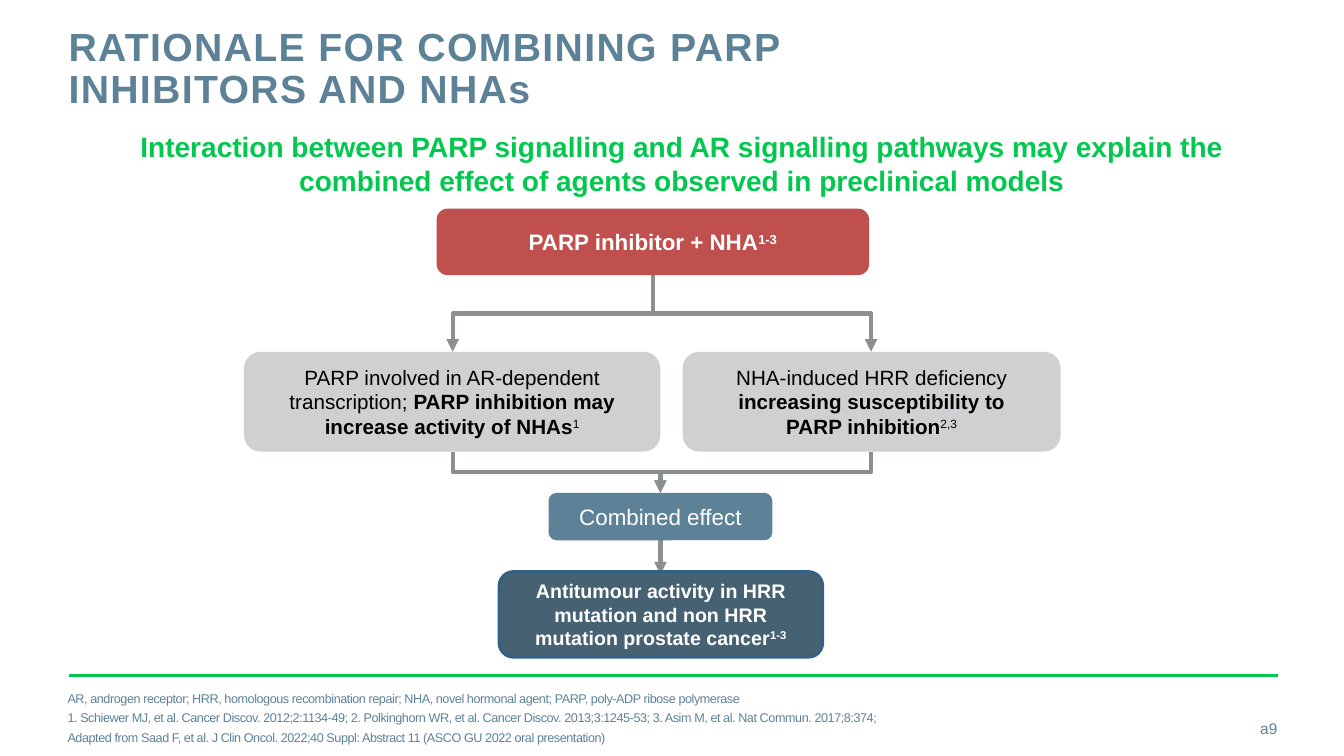
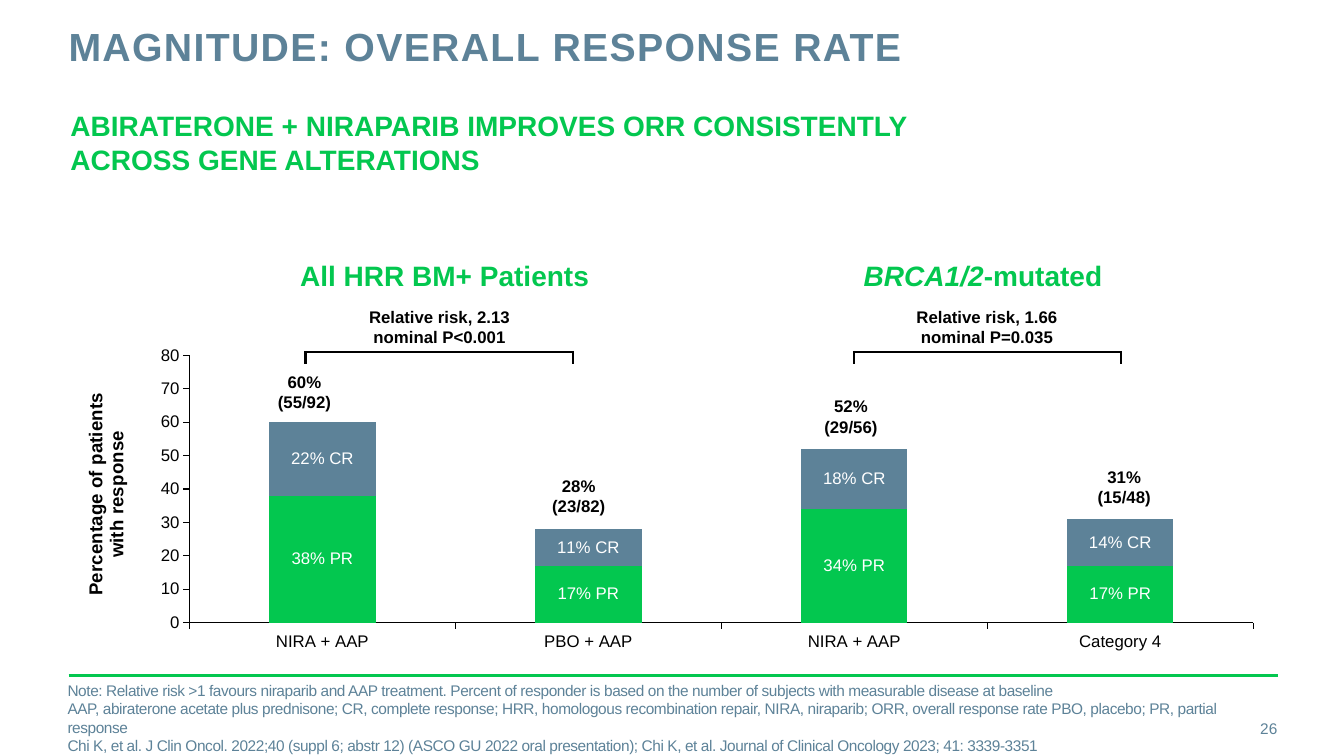
from lxml import etree
from pptx import Presentation
from pptx.chart.data import CategoryChartData
from pptx.dml.color import RGBColor
from pptx.enum.chart import XL_CHART_TYPE, XL_LABEL_POSITION, XL_TICK_MARK
from pptx.enum.shapes import MSO_CONNECTOR, MSO_SHAPE
from pptx.enum.text import MSO_ANCHOR, PP_ALIGN
from pptx.oxml import parse_xml
from pptx.oxml.ns import nsdecls, qn
from pptx.util import Inches, Pt

GREEN = RGBColor(0x03, 0xC7, 0x4F)
STEEL = RGBColor(0x5D, 0x82, 0x98)
DARK_STEEL = RGBColor(0x46, 0x61, 0x72)
OUTLINE_BLUE = RGBColor(0x33, 0x60, 0x84)
RED = RGBColor(0xC0, 0x50, 0x4D)
LIGHT_GREY = RGBColor(0xD1, 0xCF, 0xD1)
ARROW_GREY = RGBColor(0x8C, 0x8F, 0x8F)
BLACK = RGBColor(0, 0, 0)
WHITE = RGBColor(255, 255, 255)
FONT = "Arial"
LEFT, CENTER, RIGHT = PP_ALIGN.LEFT, PP_ALIGN.CENTER, PP_ALIGN.RIGHT
TOP, MIDDLE = MSO_ANCHOR.TOP, MSO_ANCHOR.MIDDLE


def write(shape, paragraphs, size, color, bold=None, align=LEFT, anchor=TOP,
          margins=(0, 0), gap=0, line=None, tracking=0):
    frame = shape.text_frame
    frame.word_wrap = True
    frame.vertical_anchor = anchor
    frame.margin_left = frame.margin_right = Inches(margins[0])
    frame.margin_top = frame.margin_bottom = Inches(margins[1])
    for index, runs in enumerate(paragraphs):
        paragraph = frame.add_paragraph() if index else frame.paragraphs[0]
        paragraph.alignment = align
        paragraph.space_before = Pt(gap if index else 0)
        if line:
            paragraph.line_spacing = Pt(line)
        font = paragraph.font
        font.name, font.size, font.bold = FONT, Pt(size), bold
        font.color.rgb = color
        for text, style in [(runs, "")] if isinstance(runs, str) else runs:
            run = paragraph.add_run()
            run.text = text
            properties = run._r.get_or_add_rPr()
            if "b" in style:
                run.font.bold = True
            if "i" in style:
                run.font.italic = True
            if "^" in style:
                properties.set("baseline", "30000")
            if tracking:
                properties.set("spc", str(round(tracking * 100)))


def connect(slide, kind, start, end, color, width, arrow=False):
    connector = slide.shapes.add_connector(kind, *map(Inches, start + end))
    connector.line.color.rgb = color
    connector.line.width = Pt(width)
    properties = connector._element.spPr
    if arrow:
        etree.SubElement(properties.find(qn("a:ln")), qn("a:tailEnd"), type="triangle")
    etree.SubElement(properties, qn("a:effectLst"))
    return connector


prs = Presentation()
prs.slide_width, prs.slide_height = Inches(13.33), Inches(7.5)

pages = [
    ("RATIONALE FOR COMBINING PARP INHIBITORS AND NHAs", "a9", 9, 3, [
        "AR, androgen receptor; HRR, homologous recombination repair; NHA, novel hormonal agent; "
        "PARP, poly-ADP ribose polymerase",
        "1. Schiewer MJ, et al. Cancer Discov. 2012;2:1134-49; 2. Polkinghorn WR, et al. Cancer Discov. "
        "2013;3:1245-53; 3. Asim M, et al. Nat Commun. 2017;8:374;",
        "Adapted from Saad F, et al. J Clin Oncol. 2022;40 Suppl: Abstract 11 (ASCO GU 2022 oral presentation)",
    ]),
    ("MAGNITUDE: OVERALL RESPONSE RATE", "26", 11, 0, [
        "Note: Relative risk >1 favours niraparib and AAP treatment. Percent of responder is based on "
        "the number of subjects with measurable disease at baseline",
        "AAP, abiraterone acetate plus prednisone; CR, complete response; HRR, homologous recombination "
        "repair, NIRA, niraparib; ORR, overall response rate PBO, placebo; PR, partial response",
        "Chi K, et al. J Clin Oncol. 2022;40 (suppl 6; abstr 12) (ASCO GU 2022 oral presentation); "
        "Chi K, et al. Journal of Clinical Oncology 2023; 41: 3339-3351",
    ]),
]
slides = []
for title, number, note_size, note_gap, notes in pages:
    slide = prs.slides.add_slide(prs.slide_layouts[6])
    slides.append(slide)
    connect(slide, MSO_CONNECTOR.STRAIGHT, (0.68, 6.7), (12.68, 6.7), GREEN, 2)
    box = slide.shapes.add_textbox
    write(box(Inches(0.68), Inches(0.27), Inches(9.5), Inches(0.88)), [title],
          28, STEEL, bold=True, line=30, tracking=1)
    write(box(Inches(0.67), Inches(6.92), Inches(11.84), Inches(0.4)), notes,
          note_size, STEEL, anchor=MIDDLE, gap=note_gap, tracking=-0.3)
    write(box(Inches(11.81), Inches(7.03), Inches(0.86), Inches(0.4)), [number],
          11, STEEL, align=RIGHT, anchor=MIDDLE)
rationale, response = slides

write(rationale.shapes.add_textbox(Inches(1.25), Inches(1.24), Inches(11.03), Inches(0.77)),
      ["Interaction between PARP signalling and AR signalling pathways may explain the "
       "combined effect of agents observed in preclinical models"],
      20, GREEN, bold=True, align=CENTER, margins=(0.1, 0.05))

branches = [
    ((6.48, 2.73), (4.49, 3.49)),
    ((6.48, 2.73), (8.64, 3.49)),
    ((4.49, 4.48), (6.55, 4.89)),
    ((8.64, 4.48), (6.55, 4.89)),
]
for (x1, y1), (x2, y2) in branches:
    turn = 1 if x2 < x1 else -1
    mid_x, mid_y = (x1 + x2) / 2, (y1 + y2) / 2
    half_drop, half_span = turn * (y2 - y1) / 2, abs(x2 - x1) / 2
    branch = connect(rationale, MSO_CONNECTOR.ELBOW, (mid_x - half_drop, mid_y - half_span),
                     (mid_x + half_drop, mid_y + half_span), ARROW_GREY, 3, arrow=True)
    branch._element.spPr.find(qn("a:xfrm")).set("rot", str(turn * 90 % 360 * 60000))
connect(rationale, MSO_CONNECTOR.STRAIGHT, (6.55, 5.36), (6.55, 5.7), ARROW_GREY, 3, arrow=True)

steps = [
    ((4.33, 2.07, 4.29, 0.66), RED, WHITE, 16, True, 0.1,
     [("PARP inhibitor + NHA", ""), ("1-3", "^")]),
    ((2.42, 3.49, 4.13, 0.99), LIGHT_GREY, BLACK, 14.7, None, 0.2,
     [("PARP involved in AR-dependent transcription; ", ""),
      ("PARP inhibition may increase activity of NHAs", "b"), ("1", "^")]),
    ((6.77, 3.49, 3.75, 0.99), LIGHT_GREY, BLACK, 14.7, None, 0.35,
     [("NHA-induced HRR deficiency ", ""),
      ("increasing susceptibility to PARP inhibition", "b"), ("2,3", "^")]),
    ((5.44, 4.89, 2.22, 0.47), STEEL, WHITE, 16, None, 0.1, "Combined effect"),
    ((4.95, 5.67, 3.21, 0.85), DARK_STEEL, WHITE, 14, True, 0.2,
     [("Antitumour activity in HRR mutation and non HRR mutation prostate cancer", ""),
      ("1-3", "^")]),
]
for place, fill, color, size, bold, side_margin, runs in steps:
    step = rationale.shapes.add_shape(MSO_SHAPE.ROUNDED_RECTANGLE, *map(Inches, place))
    step.shadow.inherit = False
    step.fill.solid()
    step.fill.fore_color.rgb = fill
    step.line.fill.background()
    write(step, [runs], size, color, bold=bold, align=CENTER, anchor=MIDDLE,
          margins=(side_margin, 0.05))
step.line.color.rgb = OUTLINE_BLUE
step.line.width = Pt(2)

write(response.shapes.add_textbox(Inches(0.6), Inches(1.03), Inches(9.3), Inches(0.77)),
      ["ABIRATERONE + NIRAPARIB IMPROVES ORR CONSISTENTLY ACROSS GENE ALTERATIONS"],
      20, GREEN, bold=True, margins=(0.1, 0.05))

rates = CategoryChartData()
rates.categories = ["NIRA + AAP", "PBO + AAP", "NIRA + AAP", "Category 4"]
rates.add_series("PR", (38, 17, 34, 17))
rates.add_series("CR", (22, 11, 18, 14))
chart = response.shapes.add_chart(XL_CHART_TYPE.COLUMN_STACKED, Inches(0.68), Inches(3.37),
                                  Inches(11.99), Inches(3.12), rates).chart
chart.has_legend = False
chart.has_title = False
chart.font.name, chart.font.size = FONT, Pt(12)
chart.font.color.rgb = BLACK
plot = chart.plots[0]
plot.gap_width, plot.overlap, plot.vary_by_categories = 150, 100, False
for series, color in zip(plot.series, (GREEN, STEEL)):
    series.format.fill.solid()
    series.format.fill.fore_color.rgb = color
    labels = series.data_labels
    labels.show_value = True
    labels.number_format = f'0"% {series.name}"'
    labels.number_format_is_linked = False
    labels.position = XL_LABEL_POSITION.CENTER
    labels.font.name, labels.font.size = FONT, Pt(12)
    labels.font.color.rgb = WHITE

percent_axis = chart.value_axis
for axis in (chart.category_axis, percent_axis):
    axis.has_major_gridlines = False
    axis.major_tick_mark = XL_TICK_MARK.OUTSIDE
    axis.minor_tick_mark = XL_TICK_MARK.NONE
    axis.format.line.color.rgb = BLACK
    axis.format.line.width = Pt(0.75)
percent_axis.minimum_scale, percent_axis.maximum_scale, percent_axis.major_unit = 0, 80, 10
percent_title = percent_axis.axis_title
percent_title.text_frame.text = "Percentage of patients\nwith response"
for paragraph in percent_title.text_frame.paragraphs:
    font = paragraph.font
    font.name, font.size, font.bold = FONT, Pt(13.3), True
    font.color.rgb = BLACK
rotation = percent_title.text_frame._txBody.find(qn("a:bodyPr"))
rotation.set("rot", "-5400000")
rotation.set("vert", "horz")

plot_area = chart._chartSpace.chart.plotArea
layouts = [
    (plot_area, 0, '<c:layoutTarget val="inner"/>', {"x": 0.1, "y": 0.05, "w": 0.88, "h": 0.85}),
    (percent_title._element, 1, "", {"x": 0.01, "y": 0.16}),
]
for parent, position, target, sizes in layouts:
    for old in parent.findall(qn("c:layout")):
        parent.remove(old)
    modes = "".join(f'<c:{key}Mode val="edge"/>' for key in "xy")
    values = "".join(f'<c:{key} val="{value}"/>' for key, value in sizes.items())
    parent.insert(position, parse_xml(
        f'<c:layout {nsdecls("c")}><c:manualLayout>{target}{modes}{values}'
        "</c:manualLayout></c:layout>"))

totals = [
    (2.55, 3.69, "60%", "(55/92)"),
    (5.27, 4.72, "28%", "(23/82)"),
    (7.97, 3.93, "52%", "(29/56)"),
    (10.68, 4.63, "31%", "(15/48)"),
]
for left, top, share, count in totals:
    write(response.shapes.add_textbox(Inches(left), Inches(top), Inches(0.94), Inches(0.4)),
          [share, count], 12, BLACK, bold=True, align=CENTER)

cohorts = [
    (2.44, 3.63, 3.03, "All HRR BM+ Patients", "Relative risk, 2.13", "nominal P<0.001"),
    (7.78, 9.06, 8.47, [("BRCA1/2", "i"), ("-mutated", "")],
     "Relative risk, 1.66", "nominal P=0.035"),
]
for heading_left, risk_left, bracket_left, heading, risk, p_value in cohorts:
    write(response.shapes.add_textbox(Inches(heading_left), Inches(2.52), Inches(3.94), Inches(0.44)),
          [heading], 20, GREEN, bold=True, align=CENTER, margins=(0.1, 0.05))
    write(response.shapes.add_textbox(Inches(risk_left), Inches(3.04), Inches(1.46), Inches(0.4)),
          [risk, p_value], 12, BLACK, bold=True, align=CENTER)
    bracket_right = bracket_left + 2.65
    for start, end in [((bracket_left - 0.01, 3.49), (bracket_right + 0.01, 3.49)),
                       ((bracket_left, 3.48), (bracket_left, 3.61)),
                       ((bracket_right, 3.48), (bracket_right, 3.61))]:
        connect(response, MSO_CONNECTOR.STRAIGHT, start, end, BLACK, 1.5)

prs.save("out.pptx")
